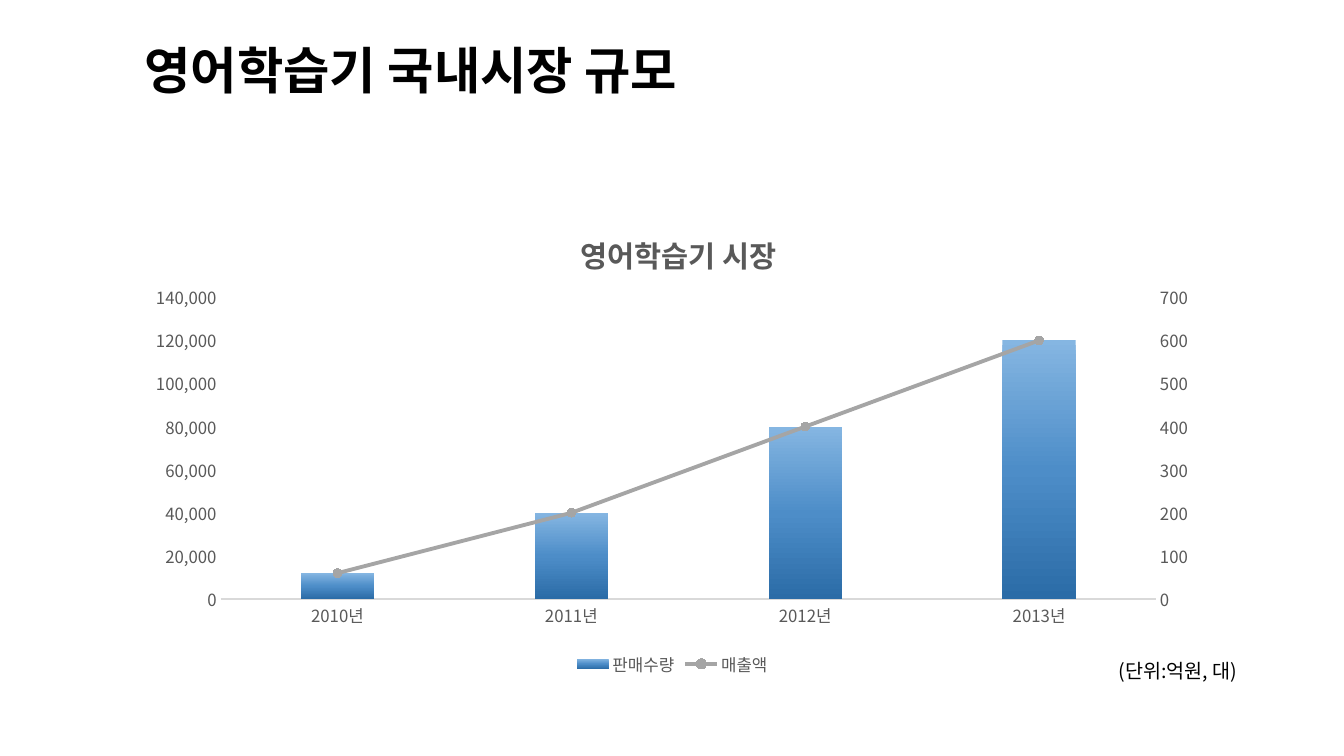
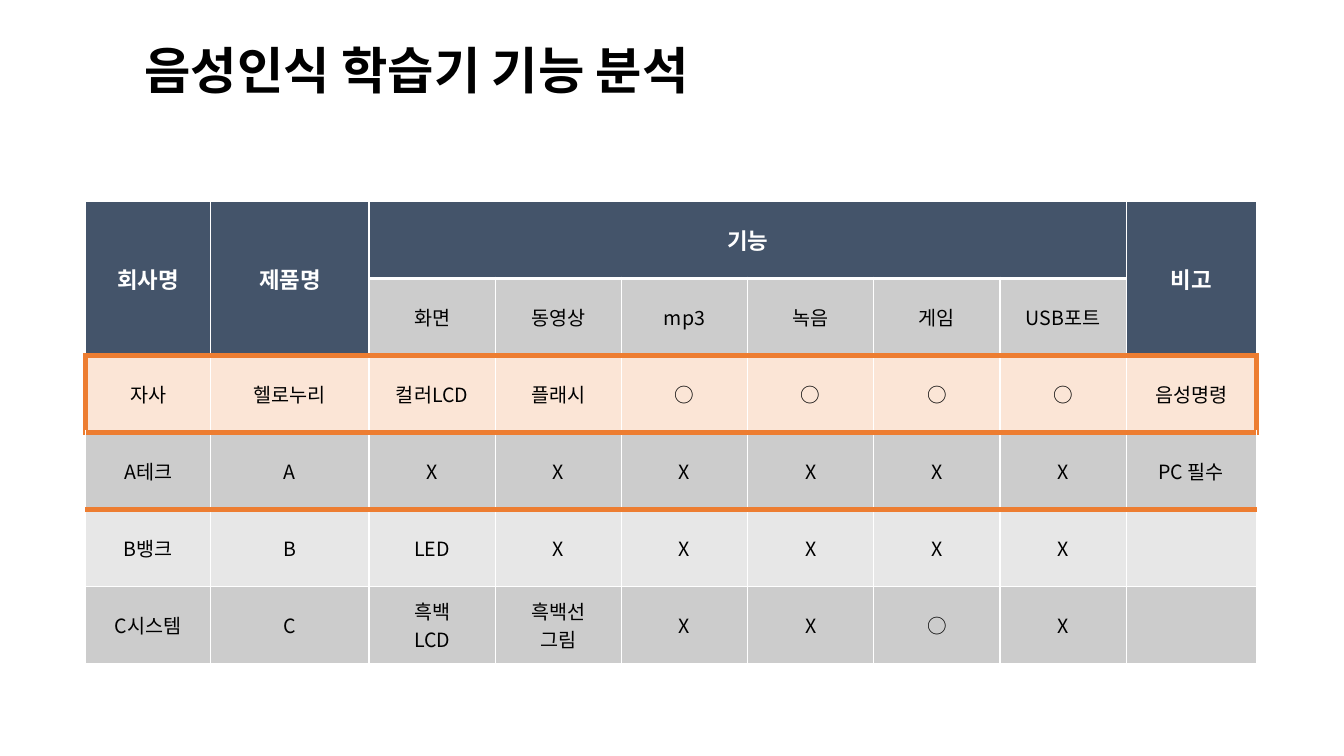
from copy import deepcopy
from dataclasses import dataclass

from lxml.etree import SubElement
from pptx import Presentation
from pptx.chart.data import CategoryChartData
from pptx.dml.color import RGBColor
from pptx.enum.chart import XL_CHART_TYPE, XL_LEGEND_POSITION, XL_MARKER_STYLE, XL_TICK_MARK
from pptx.enum.text import MSO_ANCHOR, PP_ALIGN
from pptx.oxml import parse_xml
from pptx.oxml.ns import nsdecls, qn
from pptx.util import Cm, Pt


@dataclass(frozen=True)
class Theme:
    font: str = "Noto Sans CJK KR"
    black: str = "000000"
    white: str = "FFFFFF"
    grey_text: str = "595959"
    axis_line: str = "D9D9D9"
    sales_line: str = "A5A5A5"
    sales_marker: str = "969696"
    header: str = "44546A"
    band_dark: str = "CCCCCC"
    band_light: str = "E7E7E7"
    highlight: str = "FBE5D6"
    accent: str = "ED7D31"
    column_gradient: tuple = ((0, "85B6E2"), (50, "4D8DC8"), (100, "2B6CA7"))
    title_size: int = 36
    chart_title_size: int = 21
    header_size: int = 16
    body_size: int = 14
    chart_size: int = 12


THEME = Theme()

MARKET_TITLE = "영어학습기 국내시장 규모"
CHART_TITLE = "영어학습기 시장"
UNIT_NOTE = "(단위:억원, 대)"
YEARS = ["2010년", "2011년", "2012년", "2013년"]
SERIES = [
    ("판매수량", [12000, 40000, 80000, 120000]),
    ("매출액", [60, 200, 400, 600]),
]

FEATURE_TITLE = "음성인식 학습기 기능 분석"
FEATURE_ROWS = [
    ["회사명", "제품명", "기능", "", "", "", "", "", "비고"],
    ["", "", "화면", "동영상", "mp3", "녹음", "게임", "USB포트", ""],
    ["자사", "헬로누리", "컬러LCD", "플래시", "○", "○", "○", "○", "음성명령"],
    ["A테크", "A", "X", "X", "X", "X", "X", "X", "PC 필수"],
    ["B뱅크", "B", "LED", "X", "X", "X", "X", "X", ""],
    ["C시스템", "C", "흑백\nLCD", "흑백선\n그림", "X", "X", "○", "X", ""],
]
HEADER_SPANS = {(0, 0): (2, 1), (0, 1): (2, 1), (0, 2): (1, 6), (0, 8): (2, 1)}
ROW_FILLS = [THEME.header, THEME.band_dark, THEME.highlight,
             THEME.band_dark, THEME.band_light, THEME.band_dark]
COLUMN_WIDTHS = [3.15, 3.99] + [3.18] * 6 + [3.28]
ROW_HEIGHT = 1.94
OWN_ROW = 2
ACCENT_EDGES = (2, 3, 4)


def style_font(font, size, color, bold=False):
    font.name = THEME.font
    SubElement(font._rPr, qn("a:ea")).set("typeface", THEME.font)
    font.size = Pt(size)
    font.bold = bold
    font.color.rgb = RGBColor.from_string(color)


def add_run(paragraph, text, size, color, bold=False):
    run = paragraph.add_run()
    run.text = text
    style_font(run.font, size, color, bold)


def add_text(slide, box, text, size, bold=False, anchor=MSO_ANCHOR.TOP):
    frame = slide.shapes.add_textbox(*map(Cm, box)).text_frame
    frame.word_wrap = True
    frame.vertical_anchor = anchor
    paragraph = frame.paragraphs[0]
    paragraph.line_spacing = 0.9
    add_run(paragraph, text, size, THEME.black, bold)


def add_titled_slide(presentation, title):
    slide = presentation.slides.add_slide(presentation.slide_layouts[6])
    add_text(slide, (3.39, 0.76, 27.1, 2.16), title, THEME.title_size, True, MSO_ANCHOR.MIDDLE)
    return slide


def set_layout(parent, position, **values):
    existing = parent.find(qn("c:layout"))
    if existing is not None:
        parent.remove(existing)
    layout = parse_xml(f"<c:layout {nsdecls('c')}><c:manualLayout/></c:layout>")
    for tag, value in values.items():
        SubElement(layout[0], qn(f"c:{tag}")).set("val", str(value))
    parent.insert(position, layout)


def style_axes(chart):
    for axis in (chart.category_axis, chart.value_axis):
        axis.major_tick_mark = axis.minor_tick_mark = XL_TICK_MARK.NONE
        axis.has_major_gridlines = False
        style_font(axis.tick_labels.font, THEME.chart_size, THEME.grey_text)
    category_line = chart.category_axis.format.line
    category_line.color.rgb = RGBColor.from_string(THEME.axis_line)
    category_line.width = Pt(1)
    chart.value_axis.format.line.fill.background()
    chart.value_axis.tick_labels.number_format = "#,##0"
    chart.value_axis.tick_labels.number_format_is_linked = False


def move_to_second_axis(chart):
    series = chart.plots[0].series[1]._element
    inverted = series.find(qn("c:invertIfNegative"))
    if inverted is not None:
        series.remove(inverted)
    line_chart = parse_xml(
        f'<c:lineChart {nsdecls("c")}><c:grouping val="standard"/><c:varyColors val="0"/>'
        '<c:marker val="1"/><c:axId val="5001"/><c:axId val="5002"/></c:lineChart>')
    line_chart.insert(2, series)
    chart.plots[0]._element.addnext(line_chart)

    previous = chart.value_axis._element
    for axis, own, other, changes in (
        (chart.value_axis, "5002", "5001", {"axPos": "r", "crosses": "max"}),
        (chart.category_axis, "5001", "5002", {"delete": "1"}),
    ):
        second = deepcopy(axis._element)
        for tag, value in {"axId": own, "crossAx": other, **changes}.items():
            second.find(qn(f"c:{tag}")).set("val", value)
        previous.addnext(second)
        previous = second


def style_columns(plot):
    plot.gap_width = 219
    plot.overlap = -27
    plot.vary_by_categories = False
    stops = "".join(f'<a:gs pos="{position * 1000}"><a:srgbClr val="{color}"/></a:gs>'
                    for position, color in THEME.column_gradient)
    plot.series[0]._element.get_or_add_spPr().append(parse_xml(
        f'<a:gradFill {nsdecls("a")} rotWithShape="1"><a:gsLst>{stops}</a:gsLst>'
        '<a:lin ang="5400000" scaled="0"/></a:gradFill>'))


def style_sales_line(series):
    series.smooth = False
    series.format.line.color.rgb = RGBColor.from_string(THEME.sales_line)
    series.format.line.width = Pt(2.75)
    series.marker.style = XL_MARKER_STYLE.CIRCLE
    series.marker.size = 6
    series.marker.format.fill.solid()
    series.marker.format.fill.fore_color.rgb = RGBColor.from_string(THEME.sales_marker)
    series.marker.format.line.color.rgb = RGBColor.from_string(THEME.sales_line)


def add_market_chart(slide):
    data = CategoryChartData(number_format="#,##0")
    data.categories = YEARS
    for name, values in SERIES:
        data.add_series(name, values)
    chart = slide.shapes.add_chart(
        XL_CHART_TYPE.COLUMN_CLUSTERED, *map(Cm, (3.39, 5.08, 27.1, 12.07)), data).chart
    style_font(chart.font, 10, THEME.black)

    chart.has_title = True
    add_run(chart.chart_title.text_frame.paragraphs[0], CHART_TITLE,
            THEME.chart_title_size, THEME.grey_text, True)
    set_layout(chart.chart_title._element, 1, xMode="edge", yMode="edge", x=0.41, y=0.05)
    chart.has_legend = True
    chart.legend.position = XL_LEGEND_POSITION.BOTTOM
    chart.legend.include_in_layout = False
    style_font(chart.legend.font, THEME.chart_size, THEME.grey_text)

    style_axes(chart)
    move_to_second_axis(chart)
    style_columns(chart.plots[0])
    style_sales_line(chart.plots[1].series[0])
    set_layout(chart.plots[0]._element.getparent(), 0, layoutTarget="inner",
               xMode="edge", yMode="edge", x=0.08, y=0.2, w=0.87, h=0.63)


def set_borders(cell, borders):
    properties = cell._tc.get_or_add_tcPr()
    for side, (color, width) in borders.items():
        properties.append(parse_xml(
            f'<a:ln{side} {nsdecls("a")} w="{Pt(width)}"><a:solidFill>'
            f'<a:srgbClr val="{color}"/></a:solidFill></a:ln{side}>'))


def horizontal_edge(edge):
    if edge in ACCENT_EDGES:
        return THEME.accent, 4.5
    return THEME.white, 3 if edge == 1 else 1


def vertical_edge(row, edge):
    if row == OWN_ROW and edge in (0, len(COLUMN_WIDTHS)):
        return THEME.accent, 4.5
    return THEME.white, 1


def fill_cell(cell, row, column, text):
    height, width = HEADER_SPANS.get((row, column), (1, 1))
    set_borders(cell, {
        "L": vertical_edge(row, column),
        "R": vertical_edge(row, column + width),
        "T": horizontal_edge(row),
        "B": horizontal_edge(row + height),
    })
    cell.fill.solid()
    cell.fill.fore_color.rgb = RGBColor.from_string(ROW_FILLS[row])
    cell.vertical_anchor = MSO_ANCHOR.MIDDLE
    cell.margin_left = cell.margin_right = Cm(0.53)
    cell.margin_top = cell.margin_bottom = Cm(0.13)
    is_header = row == 0
    size = THEME.header_size if is_header else THEME.body_size
    color = THEME.white if is_header else THEME.black
    frame = cell.text_frame
    for index, line in enumerate(text.split("\n") if text else []):
        paragraph = frame.add_paragraph() if index else frame.paragraphs[0]
        paragraph.alignment = PP_ALIGN.CENTER
        add_run(paragraph, line, size, color, is_header)


def add_feature_table(slide):
    row_count, column_count = len(FEATURE_ROWS), len(COLUMN_WIDTHS)
    table = slide.shapes.add_table(
        row_count, column_count, Cm(2.16), Cm(5.08),
        Cm(sum(COLUMN_WIDTHS)), Cm(ROW_HEIGHT * row_count)).table
    table.first_row = table.horz_banding = False
    for column, width in zip(table.columns, COLUMN_WIDTHS):
        column.width = Cm(width)
    for row in table.rows:
        row.height = Cm(ROW_HEIGHT)
    for (row, column), (height, width) in HEADER_SPANS.items():
        table.cell(row, column).merge(table.cell(row + height - 1, column + width - 1))
    for row, texts in enumerate(FEATURE_ROWS):
        for column, text in enumerate(texts):
            fill_cell(table.cell(row, column), row, column, text)


def main():
    presentation = Presentation()
    presentation.slide_width = Cm(33.87)
    presentation.slide_height = Cm(19.05)

    market_slide = add_titled_slide(presentation, MARKET_TITLE)
    add_market_chart(market_slide)
    add_text(market_slide, (27.94, 16.54, 3.99, 0.79), UNIT_NOTE, THEME.body_size)

    feature_slide = add_titled_slide(presentation, FEATURE_TITLE)
    add_feature_table(feature_slide)

    presentation.save("out.pptx")


if __name__ == "__main__":
    main()
